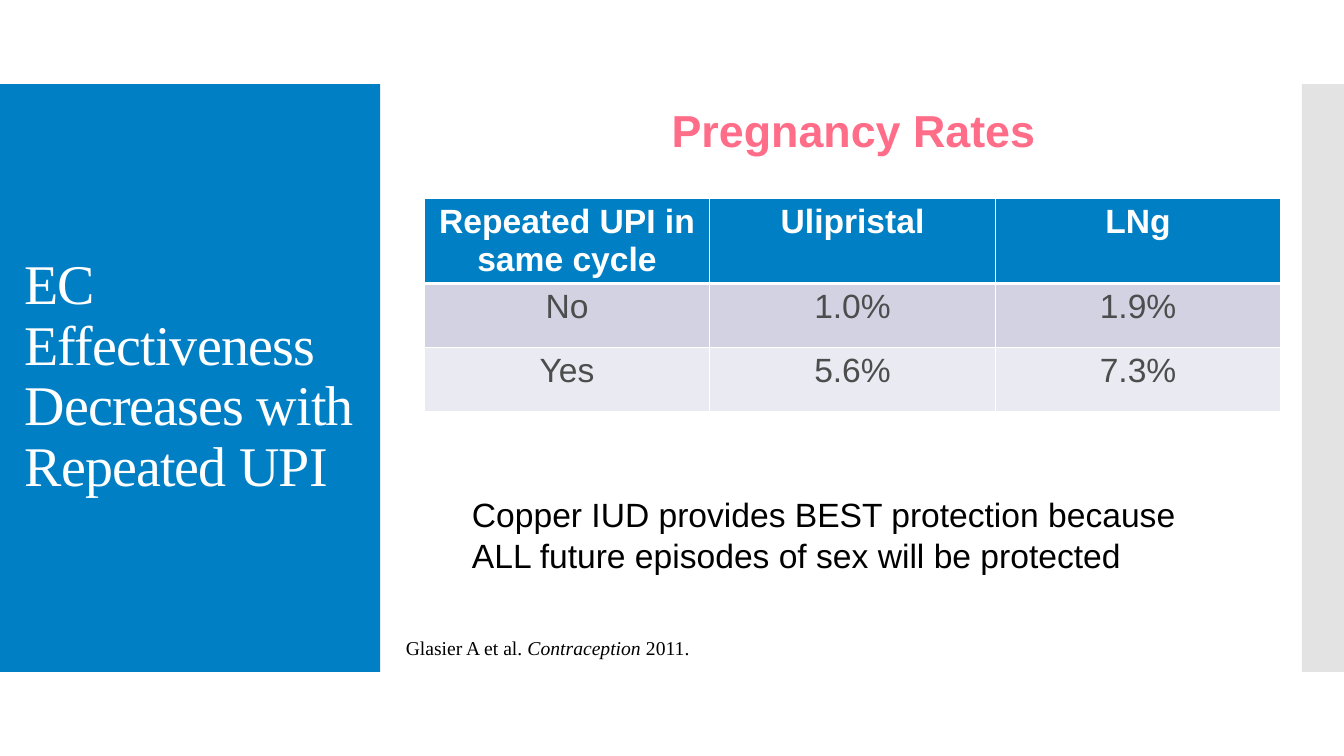
"""Build the slide on emergency contraception and repeated unprotected intercourse."""
from dataclasses import dataclass

from lxml.etree import SubElement
from pptx import Presentation
from pptx.dml.color import RGBColor as RGB
from pptx.enum.shapes import MSO_SHAPE as SHAPE
from pptx.enum.text import MSO_ANCHOR as ANCHOR, MSO_AUTO_SIZE as FIT, PP_ALIGN as ALIGN
from pptx.oxml.ns import qn
from pptx.util import Pt

SCALE = 9525


@dataclass(frozen=True)
class Theme:
    blue: str = "007FC4"
    grey: str = "C8C8C8"
    pink: str = "FF6D88"
    white: str = "FFFFFF"
    black: str = "000000"
    value: str = "4D4D4D"
    bands: tuple = ("D2D2E3", "EAEAF2")
    sans: str = "Arial"
    serif: str = "Times New Roman"
    title: int = 40
    heading: int = 32
    body: int = 24
    citation: int = 14


class SlideBuilder:
    def __init__(self, theme, slide):
        self.theme = theme
        self.shapes = slide.shapes

    def panel(self, box, color, opacity=100):
        panel = self.shapes.add_shape(SHAPE.RECTANGLE, *(n * SCALE for n in box))
        panel.shadow.inherit = False
        panel.line.fill.background()
        panel.fill.solid()
        panel.fill.fore_color.rgb = RGB.from_string(color)
        if opacity < 100:
            tint = panel.element.spPr.find(qn("a:solidFill"))[0]
            SubElement(tint, qn("a:alpha"), val=str(opacity * 1000))

    def add_words(self, paragraph, words, size, name, color, spacing=0, **formats):
        run = paragraph.add_run()
        run.text = words
        run.font.color.rgb = RGB.from_string(color)
        for key, value in {"size": Pt(size), "name": name, **formats}.items():
            setattr(run.font, key, value)
        if spacing:
            run._r.get_or_add_rPr().set("spc", str(spacing))

    def text(self, box, runs, frame=None, layout=None, **style):
        text_frame = self.shapes.add_textbox(*(n * SCALE for n in box)).text_frame
        paragraph = text_frame.paragraphs[0]
        frame = {"word_wrap": True, "auto_size": FIT.SHAPE_TO_FIT_TEXT, **(frame or {})}
        for target, formats in ((text_frame, frame), (paragraph, layout or {})):
            for key, value in formats.items():
                setattr(target, key, value)
        for words, formats in runs:
            self.add_words(paragraph, words, **style, **formats)

    def border(self, cell, side, width):
        line = SubElement(cell._tc.get_or_add_tcPr(), qn(f"a:ln{side}"), w=str(Pt(width)))
        SubElement(SubElement(line, qn("a:solidFill")), qn("a:srgbClr"), val=self.theme.white)

    def table(self, left, top, column, row, rows):
        theme = self.theme
        count = len(rows[0])
        box = (left, top, column * count, row * len(rows))
        table = self.shapes.add_table(len(rows), count, *(n * SCALE for n in box)).table
        for r, values in enumerate(rows):
            table.rows[r].height = row * SCALE
            header = r == 0
            for c, words in enumerate(values):
                cell = table.cell(r, c)
                widths = {"L": 1, "R": 1, "T": 3 if r == 1 else 1, "B": 3 if header else 1}
                for side, width in widths.items():
                    self.border(cell, side, width)
                cell.fill.solid()
                cell.fill.fore_color.rgb = RGB.from_string(
                    theme.blue if header else theme.bands[(r - 1) % 2])
                paragraph = cell.text_frame.paragraphs[0]
                paragraph.alignment = ALIGN.CENTER
                self.add_words(paragraph, words, theme.body, theme.sans,
                               theme.white if header else theme.value, bold=header)


def main():
    theme = Theme()
    deck = Presentation()
    deck.slide_width, deck.slide_height = 1280 * SCALE, 720 * SCALE
    builder = SlideBuilder(theme, deck.slides.add_slide(deck.slide_layouts[6]))

    builder.panel((0, 80, 362, 560), theme.blue)
    builder.panel((1240, 80, 40, 560), theme.grey, opacity=50)
    builder.text((14, 118, 338, 483), [("EC Effectiveness Decreases with Repeated UPI", {})],
                 frame={"vertical_anchor": ANCHOR.MIDDLE, "auto_size": FIT.NONE},
                 layout={"line_spacing": 0.9},
                 size=theme.title, name=theme.serif, color=theme.white, spacing=-60)
    builder.table(404, 189, 272, 61, [
        ("Repeated UPI in same cycle", "Ulipristal", "LNg"),
        ("No", "1.0%", "1.9%"),
        ("Yes", "5.6%", "7.3%"),
    ])
    builder.text((508, 93, 610, 61), [("Pregnancy Rates", {"bold": True})],
                 layout={"alignment": ALIGN.CENTER},
                 size=theme.heading, name=theme.sans, color=theme.pink)
    builder.text((377, 601, 408, 32),
                 [("Glasier A et al. ", {}), ("Contraception", {"italic": True}), (" 2011.", {})],
                 frame={"word_wrap": False},
                 size=theme.citation, name=theme.serif, color=theme.black)
    builder.text((440, 466, 745, 87),
                 [("Copper IUD provides BEST protection because "
                   "ALL future episodes of sex will be protected", {})],
                 size=theme.body, name=theme.sans, color=theme.black)
    deck.save("out.pptx")


if __name__ == "__main__":
    main()
